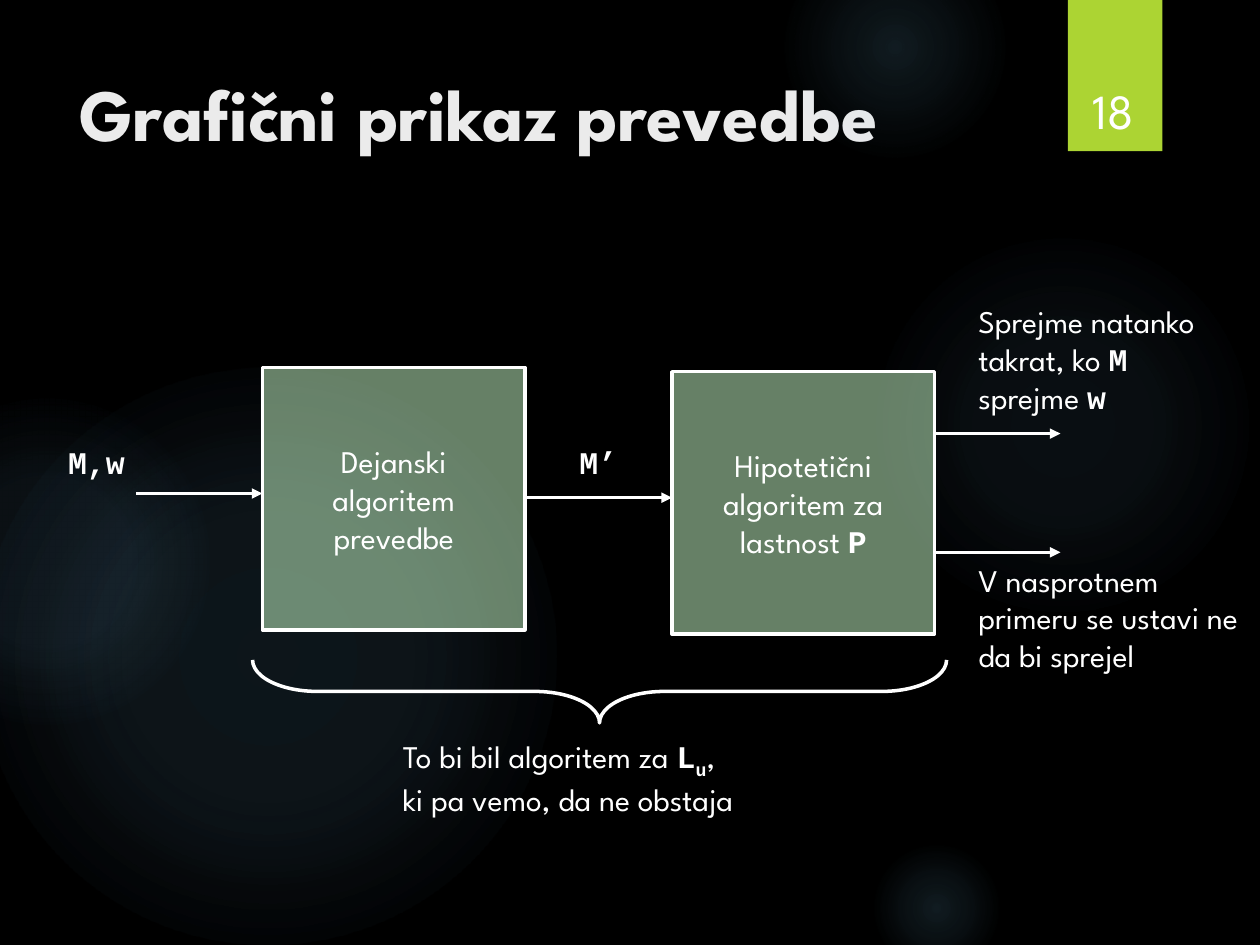
import pptx
import pptx.util
import pptx.dml.color
import pptx.enum.shapes
import pptx.enum.text
import pptx.oxml
import pptx.oxml.ns

RGB = pptx.dml.color.RGBColor
SHAPE = pptx.enum.shapes.MSO_SHAPE
ANCHOR = pptx.enum.text.MSO_ANCHOR
ALIGN = pptx.enum.text.PP_ALIGN
FIT = pptx.enum.text.MSO_AUTO_SIZE

BLACK = RGB(0, 0, 0)
WHITE = RGB(255, 255, 255)
PALE = RGB(0xEB, 0xEB, 0xEB)
LIME = RGB(0xAC, 0xD4, 0x33)
MINT = RGB(0xCC, 0xFF, 0xCC)
GLOW = RGB(0x7A, 0xC4, 0xF0)

SANS = "League Spartan"
MONO = "Courier New"
SIDE = 25
ROW = 35
TAG = 41.6


def grid(*cells):
    return [pptx.util.Inches(cell / 12) for cell in cells]


def node(tag, **attrs):
    item = pptx.oxml.parse_xml(f"<{tag} {pptx.oxml.ns.nsdecls('a')}/>")
    for name, value in attrs.items():
        item.set(name, str(value))
    return item


def add_shape(slide, kind, area, fill=None, line=None):
    shape = slide.shapes.add_shape(kind, *grid(*area))
    shape.shadow.inherit = False
    if fill is None:
        shape.fill.background()
    else:
        shape.fill.solid()
        shape.fill.fore_color.rgb = fill
    if line is None:
        shape.line.fill.background()
    else:
        shape.line.color.rgb = line
        shape.line.width = pptx.util.Pt(2)
    return shape


def add_glow(slide, area, stops):
    orb = add_shape(slide, SHAPE.OVAL, area, GLOW)
    colors = "".join(
        f'<a:gs pos="{pos * 1000}"><a:srgbClr val="{GLOW}">'
        f'<a:alpha val="{alpha * 1000}"/></a:srgbClr></a:gs>'
        for pos, alpha in stops)
    grad = pptx.oxml.parse_xml(
        f"<a:gradFill {pptx.oxml.ns.nsdecls('a')}><a:gsLst>{colors}</a:gsLst>"
        '<a:path path="circle"><a:fillToRect l="50000" t="50000" '
        'r="50000" b="50000"/></a:path></a:gradFill>')
    solid = orb.element.spPr.find(pptx.oxml.ns.qn("a:solidFill"))
    orb.element.spPr.replace(solid, grad)


def style(font, face=SANS, size=18, color=WHITE, bold=False):
    font.name = face
    font.size = pptx.util.Pt(size)
    font.color.rgb = color
    font.bold = bold


def write(frame, lines, align=ALIGN.LEFT, wrap=True, anchor=ANCHOR.TOP, **look):
    frame.word_wrap = wrap
    frame.vertical_anchor = anchor
    for index, line in enumerate(lines):
        para = frame.add_paragraph() if index else frame.paragraphs[0]
        para.alignment = align
        style(para.font, **look)
        for part in line:
            if part == "\n":
                para.add_line_break()
                continue
            text, kind = part if isinstance(part, tuple) else (part, "")
            run = para.add_run()
            run.text = text
            if kind:
                run.font.name = MONO
                run.font.bold = True
            if kind == "sub":
                run.font._element.set("baseline", "-25000")


def add_text(slide, area, lines, **look):
    box = slide.shapes.add_textbox(*grid(*area))
    write(box.text_frame, lines, **look)


def add_box(slide, col, row, lines):
    box = add_shape(slide, SHAPE.RECTANGLE, (col, row, SIDE, SIDE), MINT, WHITE)
    color = box.element.spPr.find(
        pptx.oxml.ns.qn("a:solidFill") + "/" + pptx.oxml.ns.qn("a:srgbClr"))
    color.append(node("a:alpha", val=50000))
    write(box.text_frame, lines, align=ALIGN.CENTER, wrap=False,
          anchor=ANCHOR.MIDDLE)


def add_arrow(slide, start, end, row):
    kind = pptx.enum.shapes.MSO_CONNECTOR.STRAIGHT
    arrow = slide.shapes.add_connector(kind, *grid(start, row, end, row))
    arrow.line.color.rgb = WHITE
    arrow.line.width = pptx.util.Pt(2)
    arrow.line._get_or_add_ln().append(node("a:tailEnd", type="triangle"))
    arrow._element.spPr.append(node("a:effectLst"))


def add_title(slide, text):
    title = slide.shapes.title
    title.left, title.top, title.width, title.height = grid(6.4, 5.9, 92.6, 18.4)
    title.text_frame.auto_size = FIT.NONE
    write(title.text_frame, [[text]], size=42, color=PALE, bold=True)


def add_brace(slide):
    brace = add_shape(slide, SHAPE.LEFT_BRACE, (54.1, 32.8, 6, 66.1), line=WHITE)
    brace.rotation = 270
    brace.adjustments[0] = 1.03
    brace.adjustments[1] = 0.5


def main():
    deck = pptx.Presentation()
    deck.slide_width, deck.slide_height = grid(120, 90)
    slide = deck.slides.add_slide(deck.slide_layouts[5])
    slide.background.fill.solid()
    slide.background.fill.fore_color.rgb = BLACK

    for area, stops in (
            ((82.7, 22, 37, 37), ((0, 7), (36, 6), (69, 0))),
            ((74.7, -6, 21, 21), ((0, 14), (36, 7), (73, 0))),
            ((82.7, 80, 13, 13), ((0, 14), (36, 7), (66, 0))),
            ((-2, ROW, 55, 55), ((0, 11), (36, 10), (75, 0))),
            ((-11, 38, 31, 31), ((0, 8), (36, 8), (72, 0)))):
        add_glow(slide, area, stops)

    add_shape(slide, SHAPE.RECTANGLE, (101.7, 0, 9, 14.4), LIME)
    add_title(slide, "Grafični prikaz prevedbe")
    add_text(slide, (101.9, 3.8, 8.3, 10.1), [["18"]], size=28,
             align=ALIGN.CENTER, anchor=ANCHOR.BOTTOM)

    add_box(slide, SIDE, ROW, [["Dejanski"], ["algoritem"], ["prevedbe"]])
    add_box(slide, 64, ROW + 0.4, [["Hipotetični"], ["algoritem za"],
                                   ["lastnost ", ("P", "mono")]])
    for start, end, row in ((13, 25, 47), (50, 64, 47.4),
                            (89, 101, 41.3), (89, 101, 52.6)):
        add_arrow(slide, start, end, row)

    for col, wide, text in ((5.3, 7.8, "M,w"), (54, 6, "M’")):
        add_text(slide, (col, TAG, wide, 4.8), [[text]], wrap=False,
                 face=MONO, bold=True)
    add_text(slide, (92, 28.2, 26.5, 12.1),
             [["Sprejme natanko takrat, ko ", ("M", "mono"),
               " sprejme ", ("w", "mono")]])
    add_text(slide, (92, 52.8, 27.2, 12.1),
             [["V nasprotnem", "\n", "primeru se ustavi ne da bi sprejel"]])
    add_brace(slide)
    add_text(slide, (37.2, 69.6, 43.4, 8.5),
             [["To bi bil algoritem za ", ("L", "mono"), ("u", "sub"), ",",
               "\n", "ki pa vemo, da ne obstaja"]])
    deck.save("out.pptx")


if __name__ == "__main__":
    main()
